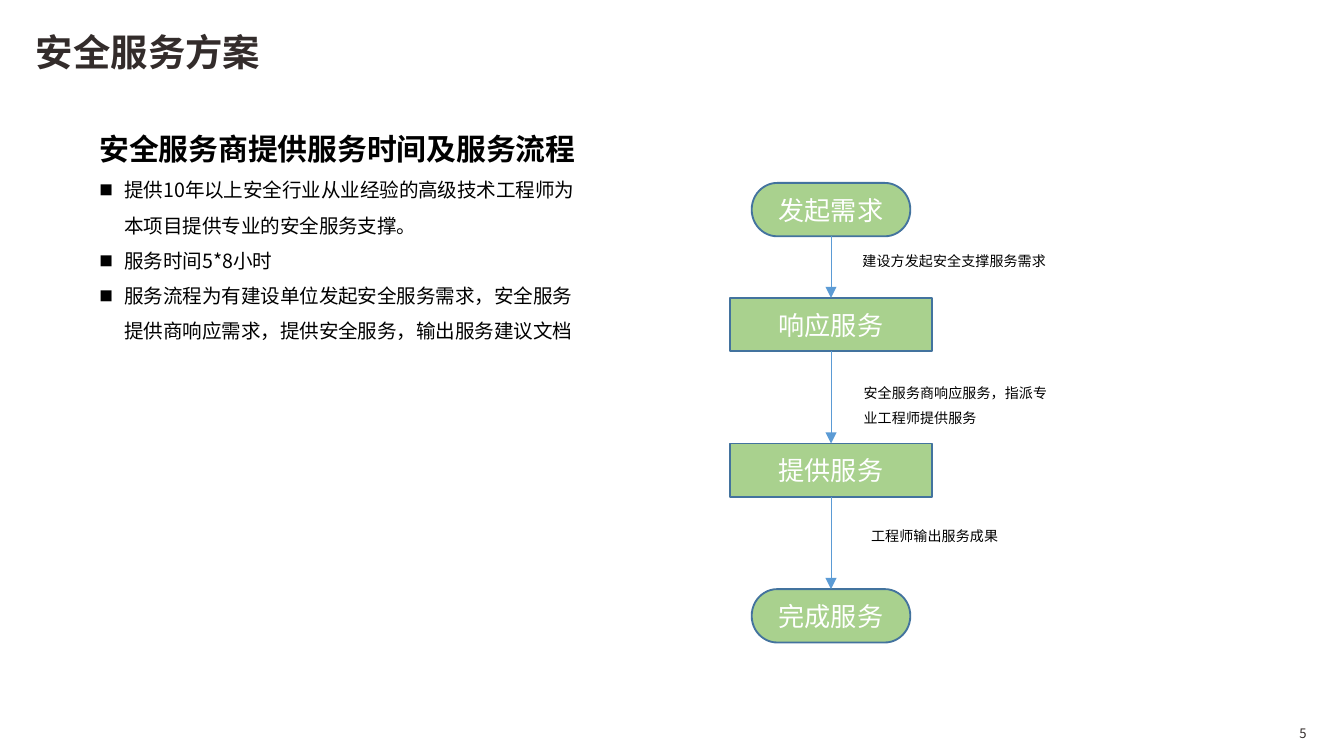
import pptx
import pptx.util
import pptx.dml.color
import pptx.enum.shapes
import pptx.enum.text
import pptx.oxml
import pptx.oxml.ns

Pt = pptx.util.Pt
Align = pptx.enum.text.PP_ALIGN
Anchor = pptx.enum.text.MSO_ANCHOR
Kind = pptx.enum.shapes.MSO_SHAPE
COLORS = {
    "title": "332C2B",
    "text": "000000",
    "label": "FFFFFF",
    "fill": "A9D18E",
    "edge": "43739E",
    "arrow": "5B9BD5",
}
CJK = "Noto Sans CJK SC"
LATIN = "Calibri"


class Deck:
    def __init__(self, wide, high):
        self.file = pptx.Presentation()
        self.file.slide_width = Pt(wide)
        self.file.slide_height = Pt(high)
        self.slide = self.file.slides.add_slide(self.file.slide_layouts[6])

    def color(self, name):
        return pptx.dml.color.RGBColor.from_string(COLORS[name])

    def add_xml(self, parent, tag, **values):
        node = pptx.oxml.parse_xml(f"<a:{tag} {pptx.oxml.ns.nsdecls('a')}/>")
        for key, value in values.items():
            node.set(key, value)
        parent.append(node)

    def style(self, para, size, face, color, bold=False, space=None):
        if space:
            para.line_spacing = space
        for run in para.runs:
            run.font.size = Pt(size)
            run.font.name = face
            run.font.bold = bold
            run.font.color.rgb = self.color(color)
            self.add_xml(run.font._element, "ea", typeface=CJK)

    def bullet(self, para):
        props = para._p.get_or_add_pPr()
        props.set("marL", str(Pt(13.5)))
        props.set("indent", str(-Pt(13.5)))
        self.add_xml(props, "buSzPct", val="70000")
        self.add_xml(props, "buFont", typeface=CJK)
        self.add_xml(props, "buChar", char="■")

    def text(self, words, left, top, wide, high, size, face=CJK, color="text",
             bold=False, space=None, align=Align.LEFT, anchor=Anchor.TOP):
        box = self.slide.shapes.add_textbox(Pt(left), Pt(top), Pt(wide), Pt(high))
        frame = box.text_frame
        frame.text = words
        frame.word_wrap = True
        frame.vertical_anchor = anchor
        para = frame.paragraphs[0]
        para.alignment = align
        self.style(para, size, face, color, bold, space)
        return frame

    def points(self, frame, items):
        for item in items:
            para = frame.add_paragraph()
            para.text = item
            self.bullet(para)
            self.style(para, 10.5, CJK, "text", space=1.5)

    def step(self, words, kind, mid, top, wide, high):
        box = self.slide.shapes.add_shape(
            kind, Pt(mid - wide / 2), Pt(top), Pt(wide), Pt(high))
        box.shadow.inherit = False
        box.fill.solid()
        box.fill.fore_color.rgb = self.color("fill")
        box.line.color.rgb = self.color("edge")
        box.line.width = Pt(1)
        frame = box.text_frame
        frame.text = words
        frame.vertical_anchor = Anchor.MIDDLE
        frame.paragraphs[0].alignment = Align.CENTER
        self.style(frame.paragraphs[0], 14, LATIN, "label")
        return box

    def arrow(self, start, end):
        link = self.slide.shapes.add_connector(
            pptx.enum.shapes.MSO_CONNECTOR.STRAIGHT, 0, 0, 0, 0)
        link.begin_connect(start, 2)
        link.end_connect(end, 0)
        link.line.color.rgb = self.color("arrow")
        link.line.width = Pt(0.5)
        self.add_xml(link.line._get_or_add_ln(), "tailEnd", type="triangle")
        self.add_xml(link._element.spPr, "effectLst")


def main():
    deck = Deck(720, 405)
    deck.text("安全服务方案", 12.2, 16.6, 583, 22.3, 20, color="title",
              bold=True, anchor=Anchor.MIDDLE)
    deck.text("5", 644.4, 385.2, 62.6, 15.1, 7, color="title",
              align=Align.RIGHT, anchor=Anchor.MIDDLE)
    body = deck.text("安全服务商提供服务时间及服务流程", 46.1, 56.9, 277.2, 129.6,
                     16, bold=True, space=1.5)
    deck.points(body, [
        "提供10年以上安全行业从业经验的高级技术工程师为本项目提供专业的安全服务支撑。",
        "服务时间5*8小时",
        "服务流程为有建设单位发起安全服务需求，安全服务提供商响应需求，提供安全服务，输出服务建议文档",
    ])

    ends = Kind.FLOWCHART_TERMINATOR, 85
    work = Kind.FLOWCHART_PROCESS, 108
    flow = [
        ("发起需求", ends, 98),
        ("响应服务", work, 159.6),
        ("提供服务", work, 237.6),
        ("完成服务", ends, 315.6),
    ]
    steps = [deck.step(words, kind, 445.2, top, wide, 28.6)
             for words, (kind, wide), top in flow]
    for start, end in zip(steps, steps[1:]):
        deck.arrow(start, end)

    notes = [
        ("建设方发起安全支撑服务需求", 455, 131.8, 16.6, None),
        ("安全服务商响应服务，指派专业工程师提供服务", 455.6, 198, 33.1, 1.5),
        ("工程师输出服务成果", 459.6, 274.3, 19.4, 1.5),
    ]
    for words, left, top, high, space in notes:
        deck.text(words, left, top, 119.5, high, 7.5, LATIN, space=space)
    deck.file.save("out.pptx")


if __name__ == "__main__":
    main()
